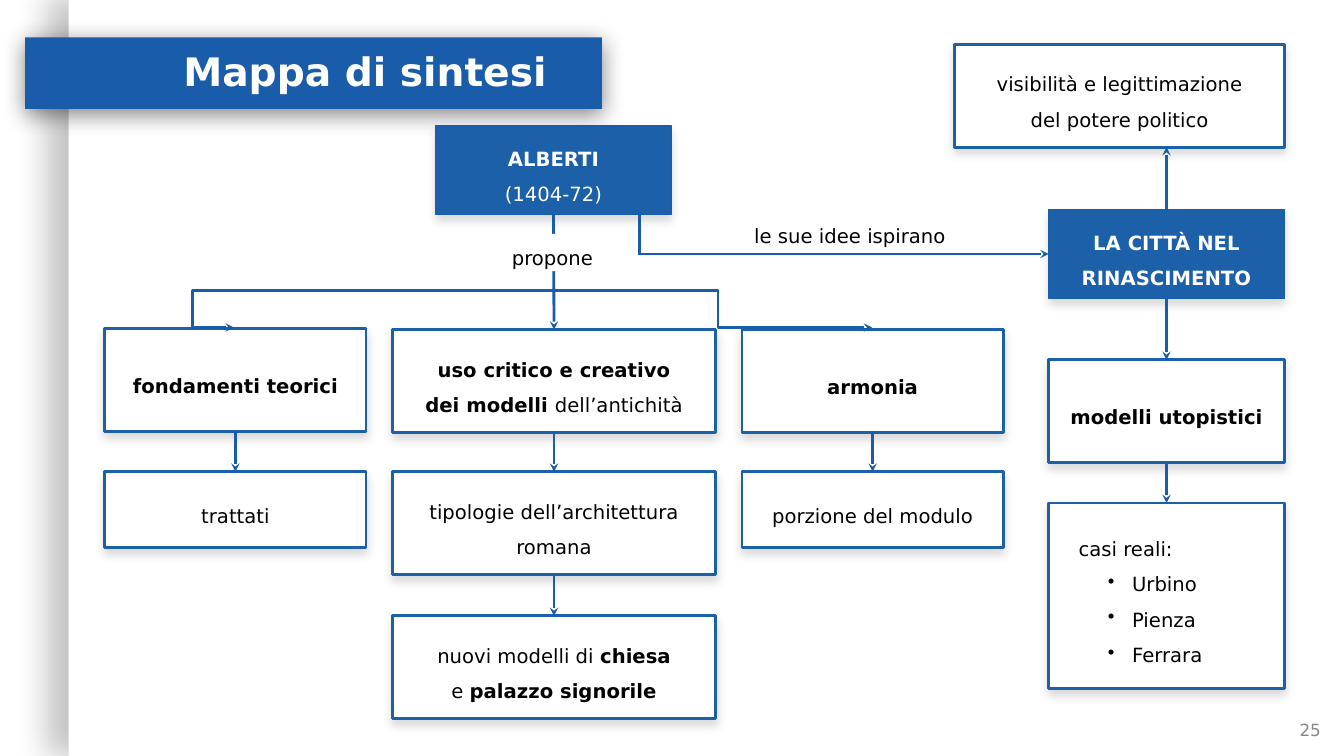
"""Build the summary map slide on Alberti and the Renaissance city."""
from lxml import etree
from pptx import Presentation
from pptx.dml.color import RGBColor
from pptx.enum.shapes import MSO_CONNECTOR as CONN, MSO_SHAPE as SHAPE
from pptx.enum.text import MSO_ANCHOR as ANCHOR, PP_ALIGN as ALIGN
from pptx.oxml.ns import qn
from pptx.util import Inches, Pt

TOP, LEFT, BOTTOM = 0, 1, 2


def rgb(value):
    return RGBColor.from_string(value)


def assign(target, values):
    for name, value in values.items():
        setattr(target, name, value)


class MapSlide:
    font = "DejaVu Sans"
    blue, box_blue, white, black, grey = "195CA9", "1B60A9", "FFFFFF", "000000", "888888"
    soft_shadow = (14, 7, 4, 90)

    def __init__(self, prs):
        self.s = prs.slides.add_slide(prs.slide_layouts[6])

    def rect(self, at, fill, line=None, width=2, shadow=None):
        sp = self.s.shapes.add_shape(SHAPE.RECTANGLE, *map(Inches, at))
        sp.shadow.inherit = False
        sp.fill.solid()
        sp.fill.fore_color.rgb = rgb(fill)
        if line:
            sp.line.color.rgb = rgb(line)
            sp.line.width = Pt(width)
        else:
            sp.line.fill.background()
        if shadow:
            alpha, blur, dist, angle = shadow
            effects = sp._element.spPr.find(qn("a:effectLst"))
            outer = etree.SubElement(effects, qn("a:outerShdw"), blurRad=str(Pt(blur)),
                                     dist=str(Pt(dist)), dir=str(angle * 60000),
                                     algn="ctr", rotWithShape="0")
            color = etree.SubElement(outer, qn("a:srgbClr"), val=self.black)
            etree.SubElement(color, qn("a:alpha"), val=str(alpha * 1000))
        return sp

    def put_text(self, sp, text, color=None, size=14, spacing=1.5, align=ALIGN.CENTER,
                 top=0.05, bottom=0.05):
        tf = sp.text_frame
        assign(tf, {"word_wrap": True, "vertical_anchor": ANCHOR.MIDDLE,
                    "margin_left": Inches(0.1), "margin_right": Inches(0.1),
                    "margin_top": Inches(top), "margin_bottom": Inches(bottom)})
        p = tf.paragraphs[0]
        self.fill_paragraph(p, text, color, size, spacing, align)
        return p

    def fill_paragraph(self, p, text, color=None, size=14, spacing=1.5, align=ALIGN.LEFT):
        assign(p, {"alignment": align, "line_spacing": spacing})
        for i, part in enumerate(text.split("*")):
            for j, words in enumerate(part.split("\n")):
                if j:
                    p.add_line_break()
                if words:
                    r = p.add_run()
                    r.text = words
                    assign(r.font, {"name": self.font, "size": Pt(size), "bold": i % 2 == 1})
                    r.font.color.rgb = rgb(color or self.black)

    def box(self, at, text):
        sp = self.rect(at, self.white, self.box_blue, shadow=self.soft_shadow)
        self.put_text(sp, text)
        return sp

    def topic(self, at, text):
        sp = self.rect(at, self.box_blue, self.blue, 0.75, self.soft_shadow)
        self.put_text(sp, text, self.white)
        return sp

    def list_box(self, at, heading, items):
        sp = self.rect(at, self.white, self.box_blue, shadow=self.soft_shadow)
        p = self.put_text(sp, heading, align=ALIGN.LEFT)
        p._p.get_or_add_pPr().set("marL", str(Inches(0.2)))
        for item in items:
            p = sp.text_frame.add_paragraph()
            pPr = p._p.get_or_add_pPr()
            pPr.set("marL", str(Inches(0.73)))
            pPr.set("indent", str(Inches(-0.24)))
            etree.SubElement(pPr, qn("a:buChar"), char="•")
            self.fill_paragraph(p, item)
        return sp

    def label(self, at, text, **style):
        self.put_text(self.s.shapes.add_textbox(*map(Inches, at)), text, **style)

    def line(self, start=(0, 0), end=(0, 0), kind=CONN.STRAIGHT, arrow=True, bend=None):
        cn = self.s.shapes.add_connector(kind, *map(Inches, (*start, *end)))
        cn.line.color.rgb = rgb(self.blue)
        cn.line.width = Pt(2)
        spPr = cn._element.spPr
        if arrow:
            etree.SubElement(spPr.find(qn("a:ln")), qn("a:tailEnd"), type="stealth")
        if bend:
            guides = spPr.find(qn("a:prstGeom")).get_or_add_avLst()
            etree.SubElement(guides, qn("a:gd"), name="adj1", fmla=f"val {round(bend * 100000)}")
        etree.SubElement(spPr, qn("a:effectLst"))
        return cn

    def join(self, first, second):
        cn = self.line()
        cn.begin_connect(first, BOTTOM)
        cn.end_connect(second, TOP)


def main():
    prs = Presentation()
    assign(prs, {"slide_width": Inches(13.33), "slide_height": Inches(7.5)})
    m = MapSlide(prs)

    m.rect((0.68, -0.02, 12.65, 7.52), m.white, shadow=(24, 22.5, 15, 180))
    m.rect((0.25, 0.37, 5.72, 0.71), m.blue, shadow=(47, 16.9, 3.8, 90))
    m.label((1.72, 0.38, 4.11, 0.71), "*Mappa di sintesi*", color=m.white, size=28,
            spacing=0.9, align=ALIGN.LEFT, top=0.1, bottom=0.1)
    m.label((12.71, 7.04, 0.57, 0.4), "25", color=m.grey, size=12, spacing=1.0)

    alberti = m.topic((4.32, 1.25, 2.34, 0.88), "*ALBERTI*\n(1404-72)")
    city = m.topic((10.4, 2.08, 2.34, 0.88), "*LA CITTÀ NEL RINASCIMENTO*")

    theory = m.box((1.04, 3.26, 2.59, 1.02), "*fondamenti teorici*")
    models = m.box((3.89, 3.27, 3.21, 1.02),
                   "*uso critico e creativo\ndei modelli *dell’antichità")
    harmony = m.box((7.36, 3.27, 2.59, 1.02), "*armonia*")
    treatises = m.box((1.04, 4.68, 2.59, 0.75), "trattati")
    typologies = m.box((3.89, 4.68, 3.21, 1.02), "tipologie dell’architettura romana")
    module = m.box((7.36, 4.68, 2.59, 0.75), "porzione del modulo")
    new_models = m.box((3.89, 6.11, 3.21, 1.02),
                       "nuovi modelli di *chiesa*\ne *palazzo signorile*")

    m.box((9.47, 0.44, 3.27, 1.02), "visibilità e legittimazione\ndel potere politico")
    utopias = m.box((10.4, 3.57, 2.34, 1.02), "*modelli utopistici*")
    cases = m.list_box((10.4, 4.99, 2.34, 1.84), "casi reali:", ["Urbino", "Pienza", "Ferrara"])

    for first, second in [(alberti, models), (theory, treatises), (models, typologies),
                          (harmony, module), (typologies, new_models), (city, utopias),
                          (utopias, cases)]:
        m.join(first, second)
    m.line((11.57, 2.08), (11.57, 1.46)).begin_connect(city, TOP)

    m.line((5.48, 2.88), (2.32, 3.25), CONN.ELBOW, bend=1.129)
    m.line((5.35, 2.88), (8.65, 3.25), CONN.ELBOW, bend=0.537)
    m.line((6.34, 2.13), (6.34, 2.52), arrow=False)
    m.line((6.33, 2.52), (10.4, 2.52)).end_connect(city, LEFT)

    caption = {"spacing": 1.63, "top": 0, "bottom": 0.04}
    m.put_text(m.rect((4.71, 2.32, 1.54, 0.37), m.white), "propone", **caption)
    m.label((7.07, 2.06, 2.72, 0.46), "le sue idee ispirano", **caption)

    prs.save("out.pptx")


if __name__ == "__main__":
    main()
